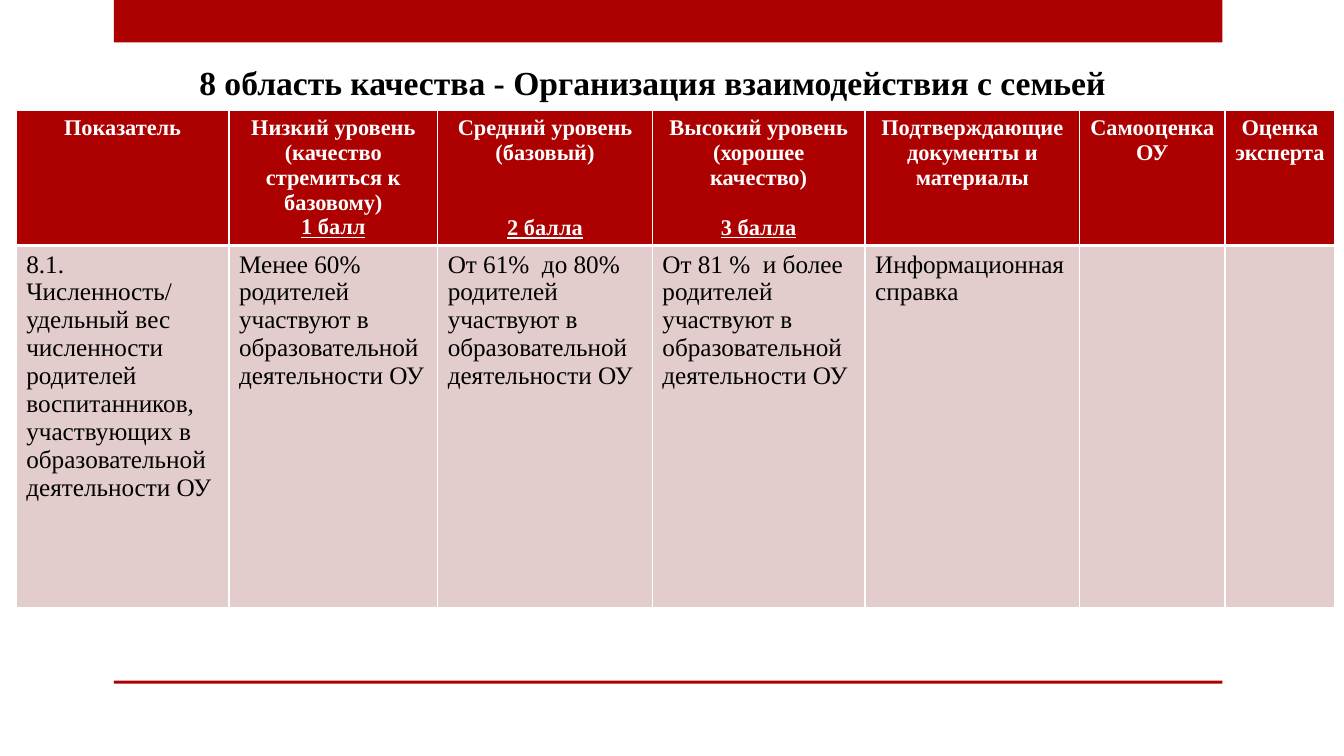
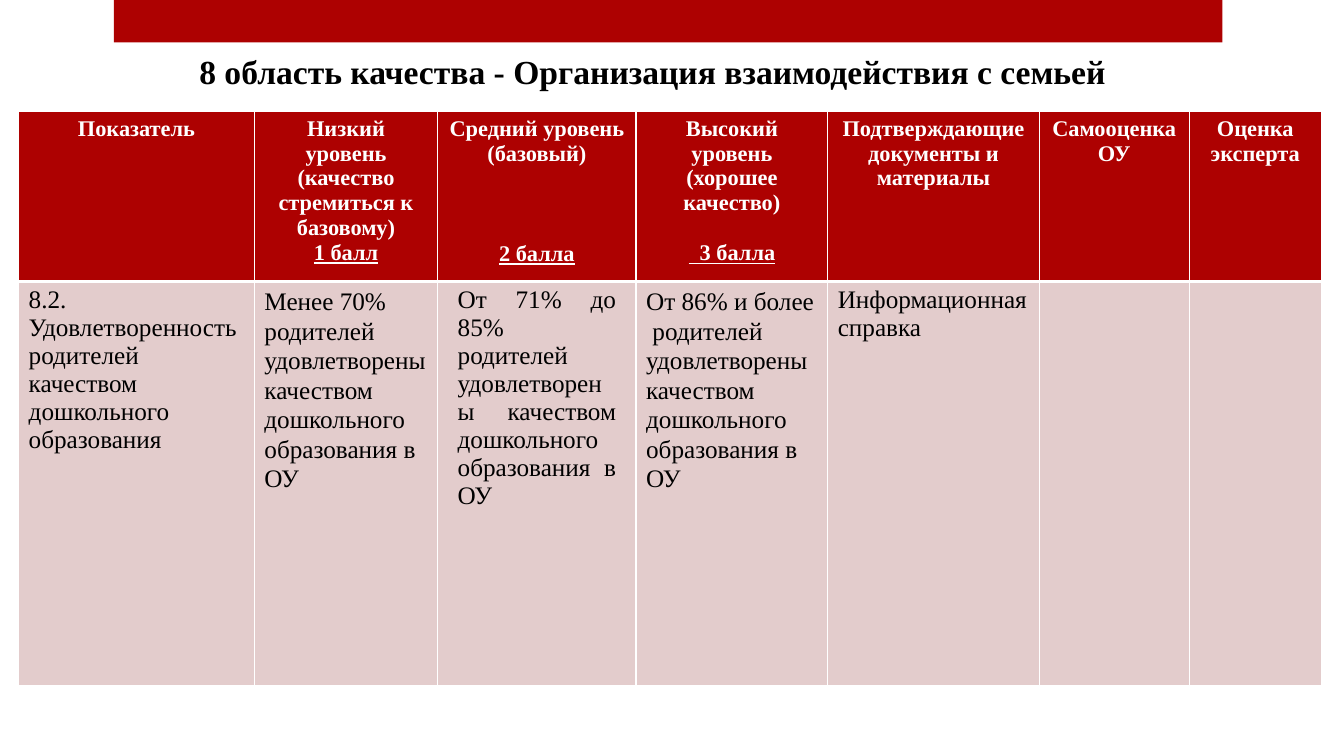
from lxml.etree import SubElement
from pptx import Presentation
from pptx.dml.color import RGBColor
from pptx.enum.shapes import MSO_SHAPE
from pptx.enum.text import MSO_ANCHOR, MSO_AUTO_SIZE, PP_ALIGN
from pptx.oxml.ns import qn
from pptx.util import Cm, Pt

RED, PINK, WHITE, BLACK = "AD0101", "E3CCCC", "FFFFFF", "000000"
FONT = "Times New Roman"
TITLE = "8 область качества - Организация взаимодействия с семьей"
TITLE_FONT = {"size": Pt(24), "bold": True, "color": BLACK}
HEAD_FONT = {"size": Pt(16), "bold": True, "color": WHITE}
BODY_FONT = {"size": Pt(18), "bold": False, "color": BLACK}
LOOSE = {"line_spacing": 1.06, "space_after": Pt(8)}
JUSTIFIED = {"alignment": PP_ALIGN.JUSTIFY}
BANDS = [(0, 1.07), (17.15, 0.08)]

LEVELS = [
    ["Низкий уровень", "(качество стремиться к базовому)"],
    ["Средний уровень", "(базовый)"],
    ["Высокий уровень", "(хорошее качество)"],
]
OTHER_HEADS = ["Подтверждающие документы и материалы", "Самооценка ОУ", "Оценка эксперта"]

SLIDES = [
    {
        "title_top": 1.42,
        "box": (0.41, 2.78),
        "cols": [5.36, 5.26, 5.41, 5.36, 5.41, 3.66, 2.77],
        "rows": [3.4, 9.12],
        "scores": [("1 балл", 0), ("2 балла", 36), ("3 балла", 18)],
        "body": [
            ("8.1.  Численность/ удельный вес численности родителей воспитанников, "
             "участвующих в образовательной деятельности ОУ", {}),
            ("Менее 60% родителей участвуют в образовательной деятельности ОУ", {}),
            ("От 61%  до 80% родителей участвуют в образовательной деятельности ОУ", {}),
            ("От 81 %  и более родителей участвуют в образовательной деятельности ОУ", {}),
            ("Информационная справка", {}),
        ],
    },
    {
        "title_top": 1.14,
        "box": (0.47, 2.8),
        "cols": [5.94, 4.62, 5.0, 4.83, 5.33, 3.78, 3.33],
        "rows": [4.29, 10.19],
        "scores": [("1 балл", 0), ("2 балла", 54), ("  3 балла", 18)],
        "body": [
            ("8.2. Удовлетворенность родителей качеством дошкольного образования", {}),
            ("Менее 70% родителей удовлетворены качеством дошкольного образования в ОУ", LOOSE),
            ("От 71% до 85% родителей удовлетворены качеством дошкольного образования в ОУ",
             JUSTIFIED),
            ("От 86% и более  родителей удовлетворены качеством дошкольного образования в ОУ",
             LOOSE),
            ("Информационная справка", {}),
        ],
    },
]


def rgb(value):
    """Turn a hex string into a colour."""
    return RGBColor.from_string(value)


def set_attrs(obj, values):
    """Set attributes of an object from a dict."""
    for name, value in values.items():
        setattr(obj, name, value)


def add_run(p, text, font, **extra):
    """Add a formatted run to a paragraph."""
    r = p.add_run()
    r.text = text
    set_attrs(r.font, {"name": FONT, "size": font["size"], "bold": font["bold"], **extra})
    r.font.color.rgb = rgb(font["color"])


def add_bands(s, layout):
    """Draw the shared red bands and move them to the layout."""
    for top, height in BANDS:
        sp = s.shapes.add_shape(MSO_SHAPE.RECTANGLE, Cm(2.87), Cm(top), Cm(27.94), Cm(height))
        sp.shadow.inherit = False
        sp.fill.solid()
        sp.fill.fore_color.rgb = rgb(RED)
        sp.line.fill.background()
        layout.shapes.element.append(sp.element)


def add_title(s, top):
    """Place and format the title."""
    sp = s.shapes.title
    set_attrs(sp, {"left": Cm(0), "top": Cm(top), "width": Cm(32.89), "height": Cm(1.28)})
    tf = sp.text_frame
    set_attrs(tf, {"word_wrap": True, "auto_size": MSO_AUTO_SIZE.NONE,
                   "vertical_anchor": MSO_ANCHOR.MIDDLE})
    p = tf.paragraphs[0]
    p.alignment = PP_ALIGN.CENTER
    add_run(p, TITLE, TITLE_FONT)


def style_cell(cell, color, bottom):
    """Give a cell white borders and a solid fill."""
    tc_pr = cell._tc.get_or_add_tcPr()
    for side, width in zip("LRTB", (1, 1, 1, bottom)):
        ln = SubElement(tc_pr, qn(f"a:ln{side}"), w=str(Pt(width)))
        fill = SubElement(ln, qn("a:solidFill"))
        SubElement(fill, qn("a:srgbClr"), val=WHITE)
    cell.fill.solid()
    cell.fill.fore_color.rgb = rgb(color)


def fill_head(cell, lines, score=None):
    """Write a centred heading with an optional underlined score."""
    tf = cell.text_frame
    for i, line in enumerate(lines):
        p = tf.add_paragraph() if i else tf.paragraphs[0]
        p.alignment = PP_ALIGN.CENTER
        add_run(p, line, HEAD_FONT)
    if score:
        text, gap = score
        p = tf.add_paragraph()
        set_attrs(p, {"alignment": PP_ALIGN.CENTER, "space_before": Pt(gap)})
        add_run(p, text, HEAD_FONT, underline=True)


def fill_body(cell, text, layout):
    """Write a body cell with its paragraph layout."""
    p = cell.text_frame.paragraphs[0]
    set_attrs(p, layout)
    if layout is JUSTIFIED:
        p_pr = p._p.get_or_add_pPr()
        for side in ("marL", "marR"):
            p_pr.set(side, str(Cm(0.25)))
    add_run(p, text, BODY_FONT)


def add_criteria_table(s, data):
    """Build the table of quality levels."""
    cols, rows = data["cols"], data["rows"]
    left, top = data["box"]
    table = s.shapes.add_table(len(rows), len(cols), Cm(left), Cm(top),
                               Cm(sum(cols)), Cm(sum(rows))).table
    for col, width in zip(table.columns, cols):
        col.width = Cm(width)
    for row, height, color, bottom in zip(table.rows, rows, (RED, PINK), (3, 1)):
        row.height = Cm(height)
        for cell in row.cells:
            style_cell(cell, color, bottom)
    heads = [(["Показатель"], None), *zip(LEVELS, data["scores"])]
    heads += [([text], None) for text in OTHER_HEADS]
    for i, (lines, score) in enumerate(heads):
        fill_head(table.cell(0, i), lines, score)
    for i, (text, layout) in enumerate(data["body"]):
        fill_body(table.cell(1, i), text, layout)


def main():
    """Build and save the presentation."""
    prs = Presentation()
    set_attrs(prs, {"slide_width": Cm(33.87), "slide_height": Cm(19.05)})
    layout = prs.slide_layouts[5]
    for i, data in enumerate(SLIDES):
        s = prs.slides.add_slide(layout)
        if i == 0:
            add_bands(s, layout)
        add_criteria_table(s, data)
        add_title(s, data["title_top"])
    prs.save("out.pptx")


if __name__ == "__main__":
    main()
